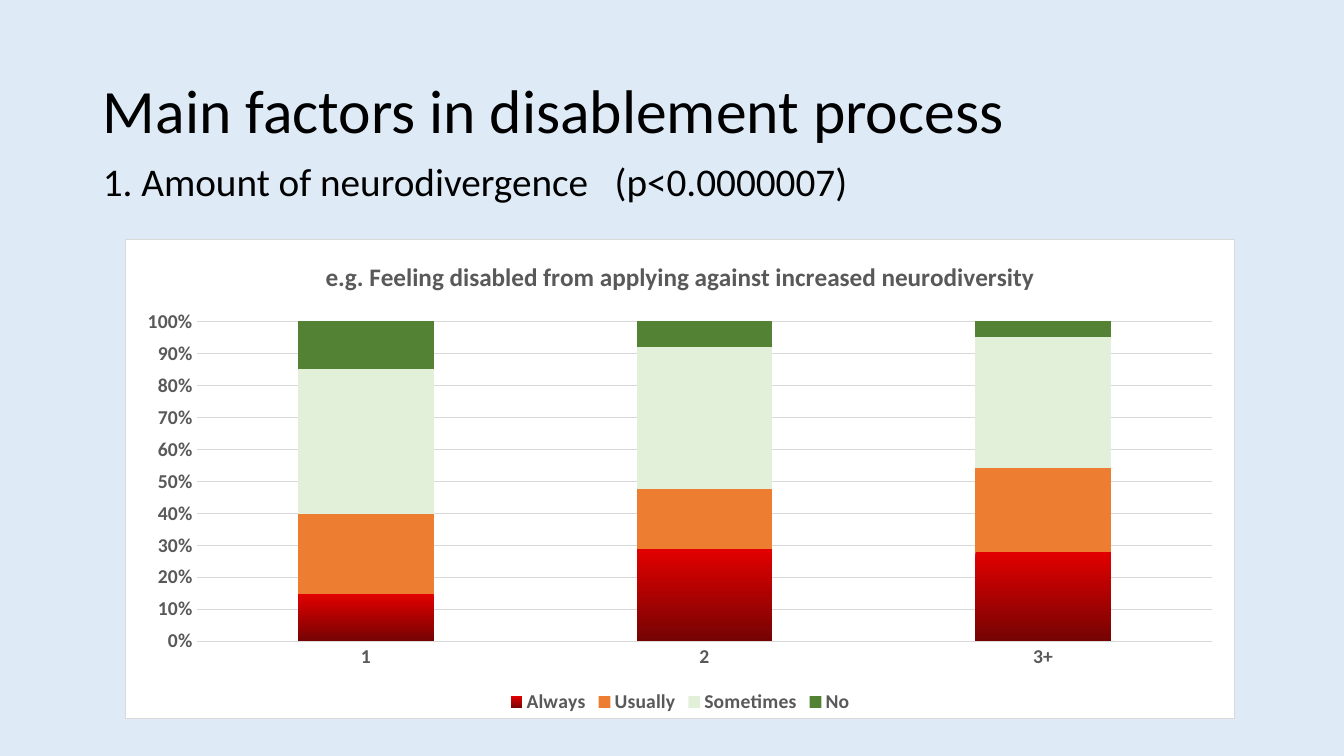
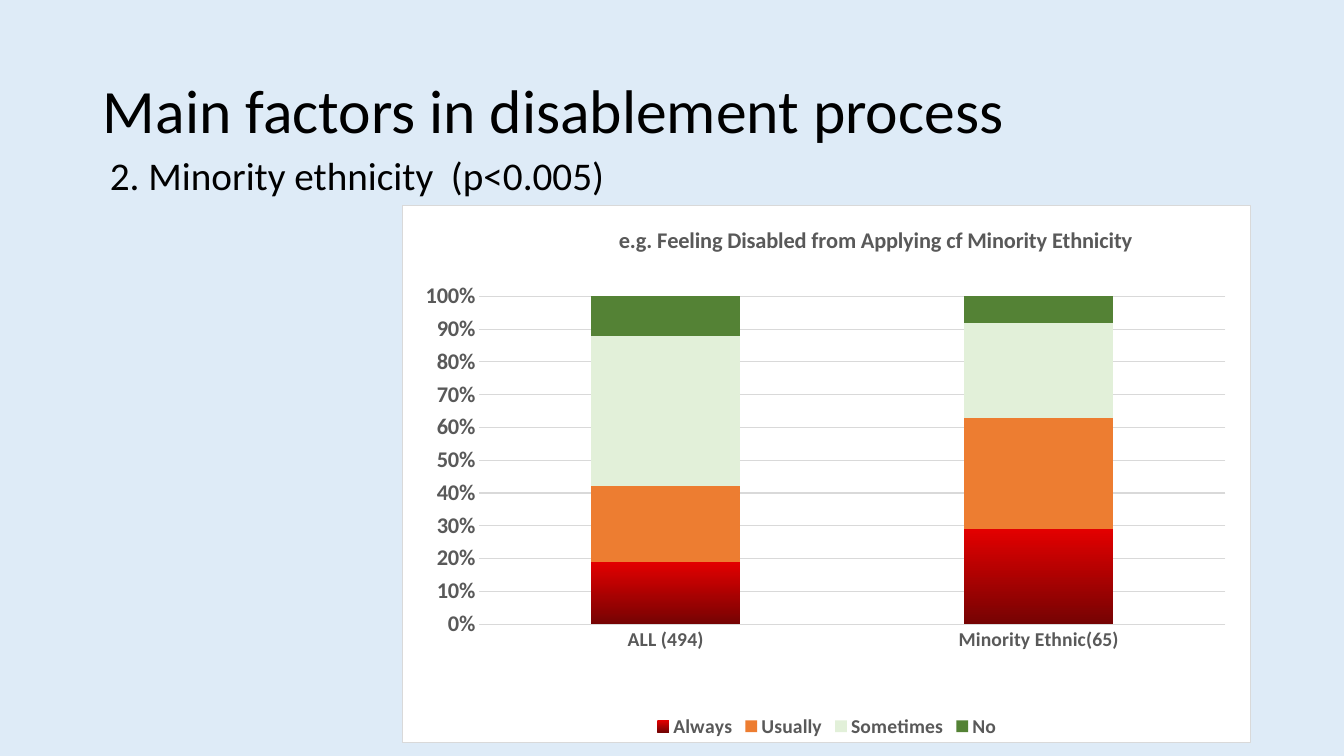
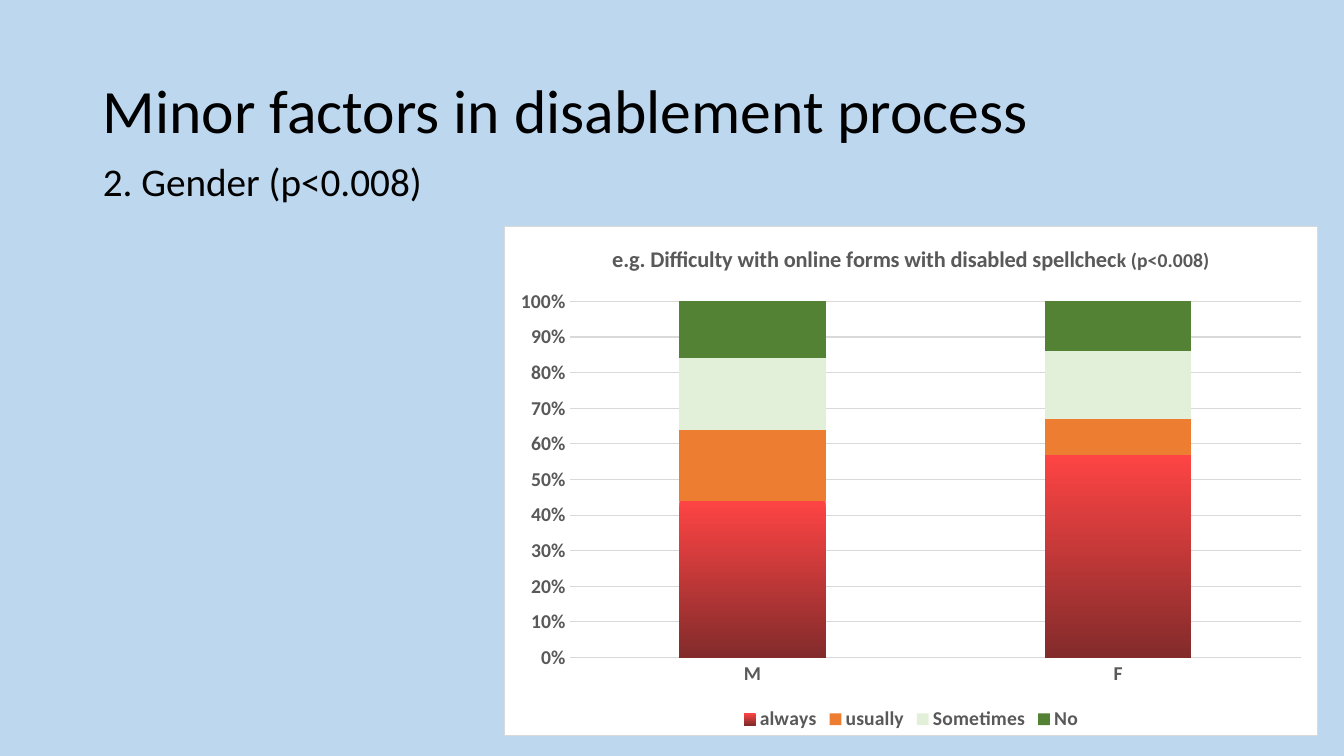
from lxml import etree
from pptx import Presentation
from pptx.chart.data import CategoryChartData
from pptx.dml.color import RGBColor
from pptx.enum import chart as ch, text
from pptx.oxml import parse_xml
from pptx.oxml.ns import nsdecls, qn
from pptx.util import Inches, Pt

FONT = "Calibri"
BLACK = RGBColor(0x00, 0x00, 0x00)
GREY = RGBColor(0x59, 0x59, 0x59)
RULE = RGBColor(0xD9, 0xD9, 0xD9)
WHITE = RGBColor(0xFF, 0xFF, 0xFF)
PALE_BLUE = RGBColor(0xDE, 0xEB, 0xF7)
MID_BLUE = RGBColor(0xBD, 0xD7, 0xEE)
ORANGE = RGBColor(0xED, 0x7D, 0x31)
PALE_GREEN = RGBColor(0xE2, 0xF0, 0xD9)
GREEN = RGBColor(0x54, 0x82, 0x35)
DEEP_REDS = (RGBColor(0xE3, 0x00, 0x00), RGBColor(0x76, 0x03, 0x03))
SOFT_REDS = (RGBColor(0xFE, 0x44, 0x44), RGBColor(0x83, 0x2B, 0x2B))

TITLE_BOX = (0.92, 0.4, 11.5, 1.45)
BODY_BOX = (0.92, 1.56, 11.18, 5.19)
ANSWERS = ("Always", "Usually", "Sometimes", "No")


def set_font(font, size, color, bold=None):
    font.name = FONT
    font.size = Pt(size)
    font.bold = bold
    font.color.rgb = color


def fill_placeholder(sp, box, words, size, anchor):
    sp.left, sp.top, sp.width, sp.height = map(Inches, box)
    tf = sp.text_frame
    tf.word_wrap = True
    tf.auto_size = text.MSO_AUTO_SIZE.NONE
    tf.vertical_anchor = anchor
    p = tf.paragraphs[0]
    p.alignment = text.PP_ALIGN.LEFT
    p.line_spacing = 0.9
    r = p.add_run()
    r.text = words
    set_font(r.font, size, BLACK)
    return p


def add_headings(slide, title, factor, body_box):
    fill_placeholder(slide.shapes.title, TITLE_BOX, title, 44, text.MSO_ANCHOR.MIDDLE)
    p = fill_placeholder(slide.placeholders[1], body_box, factor, 28, text.MSO_ANCHOR.TOP)
    p.space_before = Pt(10)
    pPr = p._p.get_or_add_pPr()
    pPr.set("marL", "0")
    pPr.set("indent", "0")
    etree.SubElement(pPr, qn("a:buNone"))


def set_layout(parent, index, **values):
    """Give a chart part a manual layout, as fractions of the chart."""
    for old in parent.findall(qn("c:layout")):
        parent.remove(old)
    layout = parse_xml(f"<c:layout {nsdecls('c')}><c:manualLayout/></c:layout>")
    for tag, value in values.items():
        etree.SubElement(layout[0], qn(f"c:{tag}")).set("val", str(value))
    parent.insert(index, layout)


def add_frame(chart):
    """White chart area with a thin grey border."""
    chart.element.find(qn("c:chart")).addnext(parse_xml(
        f"<c:spPr {nsdecls('c', 'a')}>"
        f'<a:solidFill><a:srgbClr val="{WHITE}"/></a:solidFill>'
        f'<a:ln w="{Pt(0.75)}"><a:solidFill><a:srgbClr val="{RULE}"/></a:solidFill></a:ln>'
        "</c:spPr>"))


def set_line(line):
    line.width = Pt(0.75)
    line.color.rgb = RULE


def style_axes(chart, value_size):
    for axis, size in ((chart.category_axis, 14), (chart.value_axis, value_size)):
        axis.major_tick_mark = axis.minor_tick_mark = ch.XL_TICK_MARK.NONE
        set_font(axis.tick_labels.font, size, GREY, True)
    set_line(chart.category_axis.format.line)
    axis = chart.value_axis
    axis.format.line.fill.background()
    axis.has_major_gridlines = True
    set_line(axis.major_gridlines.format.line)
    axis.minimum_scale, axis.maximum_scale, axis.major_unit = 0, 1, 0.1
    axis.tick_labels.number_format = "0%"
    axis.tick_labels.number_format_is_linked = False


def color_series(plot, reds):
    plot.gap_width, plot.overlap = 150, 100
    plot.vary_by_categories = False
    first, *others = plot.series
    fill = first.format.fill
    fill.gradient()
    fill.gradient_angle = 270
    for stop, color in zip(fill.gradient_stops, reds):
        stop.color.rgb = color
    for series, color in zip(others, (ORANGE, PALE_GREEN, GREEN)):
        series.format.fill.solid()
        series.format.fill.fore_color.rgb = color


def add_answer_chart(slide, box, title_runs, cats, values, answers=ANSWERS,
                     reds=DEEP_REDS, value_size=14):
    """Share of each answer by group; title_runs holds (words, size) pairs."""
    data = CategoryChartData()
    data.categories = cats
    for answer, shares in zip(answers, values):
        data.add_series(answer, shares)
    chart = slide.shapes.add_chart(
        ch.XL_CHART_TYPE.COLUMN_STACKED_100, *map(Inches, box), data).chart
    set_font(chart.font, 10, BLACK)
    add_frame(chart)

    chart.has_title = True
    p = chart.chart_title.text_frame.paragraphs[0]
    for words, size in title_runs:
        r = p.add_run()
        r.text = words
        set_font(r.font, size, GREY, True)
    chart.chart_title.include_in_layout = False

    chart.has_legend = True
    chart.legend.position = ch.XL_LEGEND_POSITION.BOTTOM
    chart.legend.include_in_layout = False
    set_font(chart.legend.font, 14, GREY, True)

    style_axes(chart, value_size)
    color_series(chart.plots[0], reds)
    return chart


def add_factor_slide(prs, background, title, factor, body_box=BODY_BOX):
    slide = prs.slides.add_slide(prs.slide_layouts[1])
    slide.background.fill.solid()
    slide.background.fill.fore_color.rgb = background
    add_headings(slide, title, factor, body_box)
    return slide


def add_neurodivergence(prs):
    slide = add_factor_slide(prs, PALE_BLUE, "Main factors in disablement process",
                             "1. Amount of neurodivergence   (p<0.0000007)")
    add_answer_chart(
        slide, (1.24, 2.37, 11.01, 4.76),
        [("e.g. Feeling disabled from applying against increased neurodiversity", 18)],
        ("1", "2", "3+"),
        ((15, 29, 28), (25, 19, 26), (46, 45, 41), (15, 8, 5)))


def add_ethnicity(prs):
    slide = add_factor_slide(prs, PALE_BLUE, "Main factors in disablement process",
                             "2. Minority ethnicity  (p<0.005)", (0.99, 1.5, 5.67, 4.76))
    chart = add_answer_chart(
        slide, (3.99, 2.03, 8.42, 5.34),
        [("e.g. Feeling Disabled from Applying cf Minority Ethnicity", 16)],
        ("ALL (494)", "Minority Ethnic(65)"),
        ((19, 29), (23, 34), (46, 29), (12, 8)), value_size=16)
    set_layout(chart.chart_title.element, 1, xMode="edge", yMode="edge", x=0.25, y=0.03)
    set_layout(chart.element.find(".//" + qn("c:plotArea")), 0, layoutTarget="inner",
               xMode="edge", yMode="edge", x=0.09, y=0.17, w=0.88, h=0.61)


def add_gender(prs):
    slide = add_factor_slide(prs, MID_BLUE, "Minor factors in disablement process",
                             "2. Gender (p<0.008)")
    add_answer_chart(
        slide, (5, 2.24, 8.07, 5.06),
        [("e.g. Difficulty with online forms with disabled spellchec", 16),
         ("k (p<0.008)", 14)],
        ("M", "F"),
        ((44, 57), (20, 10), (20, 19), (16, 14)),
        answers=("always", "usually", "Sometimes", "No"), reds=SOFT_REDS)


def main():
    prs = Presentation()
    prs.slide_width, prs.slide_height = Inches(13.33), Inches(7.5)
    add_neurodivergence(prs)
    add_ethnicity(prs)
    add_gender(prs)
    prs.save("out.pptx")


if __name__ == "__main__":
    main()
